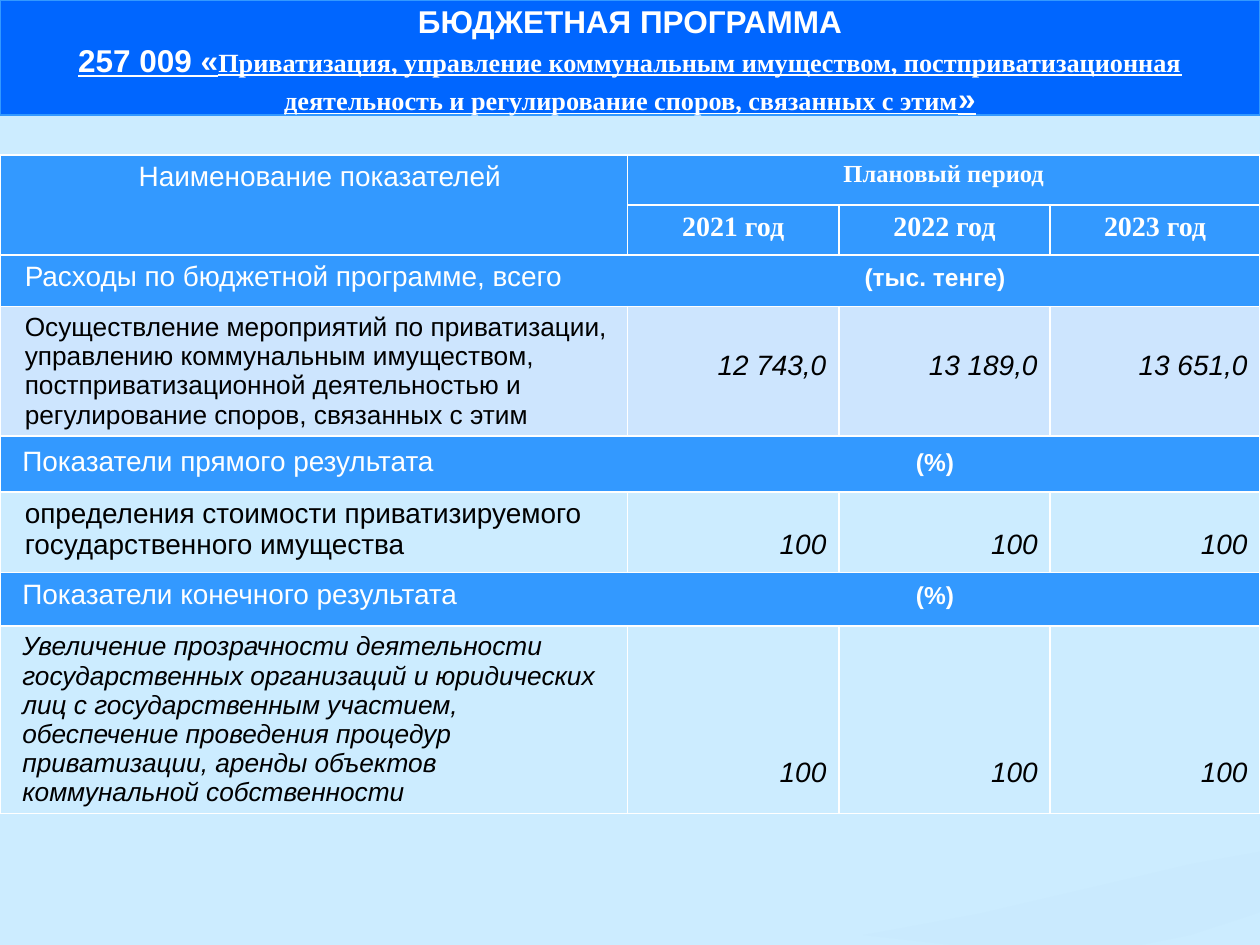
from dataclasses import dataclass, field
from lxml import etree
from pptx import Presentation
from pptx import util as u
from pptx.dml.color import RGBColor
from pptx.enum import shapes, text
from pptx.oxml import ns

WHITE, BLACK = "FFFFFF", "000000"
HEADER, EXPENSE, TITLE = "3399FF", "CDE5FE", "0066FF"
CENTER, LEFT, RIGHT = text.PP_ALIGN.CENTER, text.PP_ALIGN.LEFT, text.PP_ALIGN.RIGHT
TOP, BOTTOM = text.MSO_ANCHOR.TOP, text.MSO_ANCHOR.BOTTOM

COLUMNS = [12.65, 4.26, 4.26, 4.23]
ROWS = [1.01, 1.01, 1.04, 2.6, 1.13, 1.63, 1.07, 3.77]
INDENT = 0.5
UNIT_CENTER = 18.85


@dataclass
class Span:
    words: str
    size: float = 16
    color: str = WHITE
    name: str = "Arial"
    style: dict = field(default_factory=dict)


@dataclass
class Entry:
    row: int
    column: int
    spans: list[Span]
    fill: str | None = HEADER
    align: int = CENTER
    anchor: int = TOP
    margins: dict = field(default_factory=dict)


@dataclass
class Section:
    row: int
    label: str
    unit: str
    left: float = 0.45
    top: float = 0.13


@dataclass
class Indicator:
    row: int
    label: str
    values: list[str]
    size: float
    fill: str | None
    bottom: float
    left: float = INDENT
    style: dict = field(default_factory=dict)


def color(value: str) -> RGBColor:
    return RGBColor.from_string(value)


def paint(fill, value: str | None) -> None:
    if value is None:
        fill.background()
    else:
        fill.solid()
        fill.fore_color.rgb = color(value)


def add_span(para, span: Span) -> None:
    run = para.add_run()
    run.text = span.words
    values = {"size": u.Pt(span.size), "name": span.name, "bold": False} | span.style
    for key, value in values.items():
        setattr(run.font, key, value)
    run.font.color.rgb = color(span.color)


def add_borders(cell) -> None:
    properties = cell._tc.get_or_add_tcPr()
    for side in ("lnL", "lnR", "lnT", "lnB"):
        line = etree.SubElement(properties, ns.qn(f"a:{side}"), w=str(u.Pt(1)))
        solid = etree.SubElement(line, ns.qn("a:solidFill"))
        etree.SubElement(solid, ns.qn("a:srgbClr"), val=WHITE)


def add_center_tab(para, position: float) -> None:
    tabs = etree.SubElement(para._p.get_or_add_pPr(), ns.qn("a:tabLst"))
    etree.SubElement(tabs, ns.qn("a:tab"), pos=str(u.Cm(position)), algn="ctr")


def fill_cell(table, entry: Entry):
    cell = table.cell(entry.row, entry.column)
    paint(cell.fill, entry.fill)
    cell.vertical_anchor = entry.anchor
    for side, length in entry.margins.items():
        setattr(cell, f"margin_{side}", u.Cm(length))
    para = cell.text_frame.paragraphs[0]
    para.alignment = entry.align
    for span in entry.spans:
        add_span(para, span)
    return para


def draw_section(table, section: Section) -> None:
    table.cell(section.row, 0).merge(table.cell(section.row, len(COLUMNS) - 1))
    spans = [Span(section.label + "\t"), Span(section.unit, 14, style={"bold": True})]
    margins = {"left": section.left, "top": section.top}
    para = fill_cell(table, Entry(section.row, 0, spans, align=LEFT, margins=margins))
    add_center_tab(para, UNIT_CENTER - section.left)


def draw_indicator(table, item: Indicator) -> None:
    label = Span(item.label, item.size, BLACK, style=item.style)
    fill_cell(table, Entry(item.row, 0, [label], item.fill, LEFT, margins={"left": item.left}))
    for column, value in enumerate(item.values, 1):
        span = Span(value, color=BLACK, style={"italic": True})
        fill_cell(table, Entry(item.row, column, [span], item.fill, RIGHT, BOTTOM,
                               {"bottom": item.bottom}))


def draw_table(page) -> None:
    frame = page.shapes.add_table(len(ROWS), len(COLUMNS), u.Cm(0), u.Cm(3.12),
                                  u.Cm(sum(COLUMNS)), u.Cm(sum(ROWS)))
    table = frame.table
    table.first_row = table.horz_banding = False
    for column, width in zip(table.columns, COLUMNS):
        column.width = u.Cm(width)
    for row, height in zip(table.rows, ROWS):
        row.height = u.Cm(height)
    for cell in table.iter_cells():
        add_borders(cell)
        paint(cell.fill, None)

    table.cell(0, 0).merge(table.cell(1, 0))
    table.cell(0, 1).merge(table.cell(0, 3))
    serif = {"name": "Times New Roman", "style": {"bold": True}}
    fill_cell(table, Entry(0, 0, [Span("Наименование показателей")], margins={"left": INDENT}))
    fill_cell(table, Entry(0, 1, [Span("Плановый период", 14, **serif)]))
    for column, year in enumerate(range(2021, 2024), 1):
        fill_cell(table, Entry(1, column, [Span(f"{year} год", **serif)]))

    for section in (
        Section(2, "Расходы по бюджетной программе, всего", "(тыс. тенге)", INDENT),
        Section(4, "Показатели прямого результата", "(%)", top=0.2),
        Section(6, "Показатели конечного результата", "(%)"),
    ):
        draw_section(table, section)

    for item in (
        Indicator(3, "Осуществление мероприятий по приватизации, управлению коммунальным "
                  "имуществом, постприватизационной деятельностью и регулирование споров, "
                  "связанных с этим", ["12 743,0", "13 189,0", "13 651,0"], 15, EXPENSE, 1.09),
        Indicator(5, "определения стоимости приватизируемого государственного имущества",
                  ["100"] * 3, 16, None, 0.25),
        Indicator(7, "Увеличение прозрачности деятельности государственных организаций и "
                  "юридических лиц с государственным участием, обеспечение проведения процедур "
                  "приватизации, аренды объектов коммунальной собственности",
                  ["100"] * 3, 15, None, 0.5, 0.45, {"italic": True}),
    ):
        draw_indicator(table, item)


def draw_wave(page) -> None:
    points = [(25.4, 17.17), (24, 17.42), (22.48, 17.78), (19.74, 18.42), (17.96, 18.75),
              (17.4, 18.85), (19.2, 19.05), (22.99, 19.05), (24, 18.85), (25.4, 18.39)]
    outline = [(round(x * 100), round(y * 100)) for x, y in points]
    builder = page.shapes.build_freeform(*outline[0], scale=u.Cm(1) / 100)
    builder.add_line_segments(outline[1:], close=True)
    wave = builder.convert_to_shape()
    wave.shadow.inherit = False
    paint(wave.fill, "C6E7FC")
    wave.line.fill.background()
    tint = wave._element.spPr.find(".//" + ns.qn("a:srgbClr"))
    etree.SubElement(tint, ns.qn("a:alpha"), val="30000")


def draw_title(page) -> None:
    box = page.shapes.add_shape(shapes.MSO_SHAPE.RECTANGLE, u.Cm(0), u.Cm(0), u.Cm(25.4), u.Cm(2.32))
    box.shadow.inherit = False
    paint(box.fill, TITLE)
    paint(box.line.fill, HEADER)
    box.line.width = u.Pt(0.75)
    frame = box.text_frame
    values = {"word_wrap": True, "vertical_anchor": TOP,
              "margin_top": u.Cm(0.03), "margin_bottom": u.Cm(0)}
    for key, value in values.items():
        setattr(frame, key, value)
    para = frame.paragraphs[0]
    para.alignment = CENTER
    para.line_spacing = u.Pt(22)
    add_span(para, Span("БЮДЖЕТНАЯ ПРОГРАММА", 18, style={"bold": True}))
    para.add_line_break()
    linked = {"bold": True, "underline": True}
    for span in (
        Span("257 009 «", 18, style=linked),
        Span("Приватизация, управление коммунальным имуществом, постприватизационная "
             "деятельность и регулирование споров, связанных с этим", 15,
             name="Times New Roman", style=linked),
        Span("»", 18, style=linked),
    ):
        add_span(para, span)


def main() -> None:
    deck = Presentation()
    deck.slide_width, deck.slide_height = u.Cm(25.4), u.Cm(19.05)
    page = deck.slides.add_slide(deck.slide_layouts[6])
    paint(page.background.fill, "CCECFF")
    draw_wave(page)
    draw_table(page)
    draw_title(page)
    deck.save("out.pptx")


if __name__ == "__main__":
    main()
